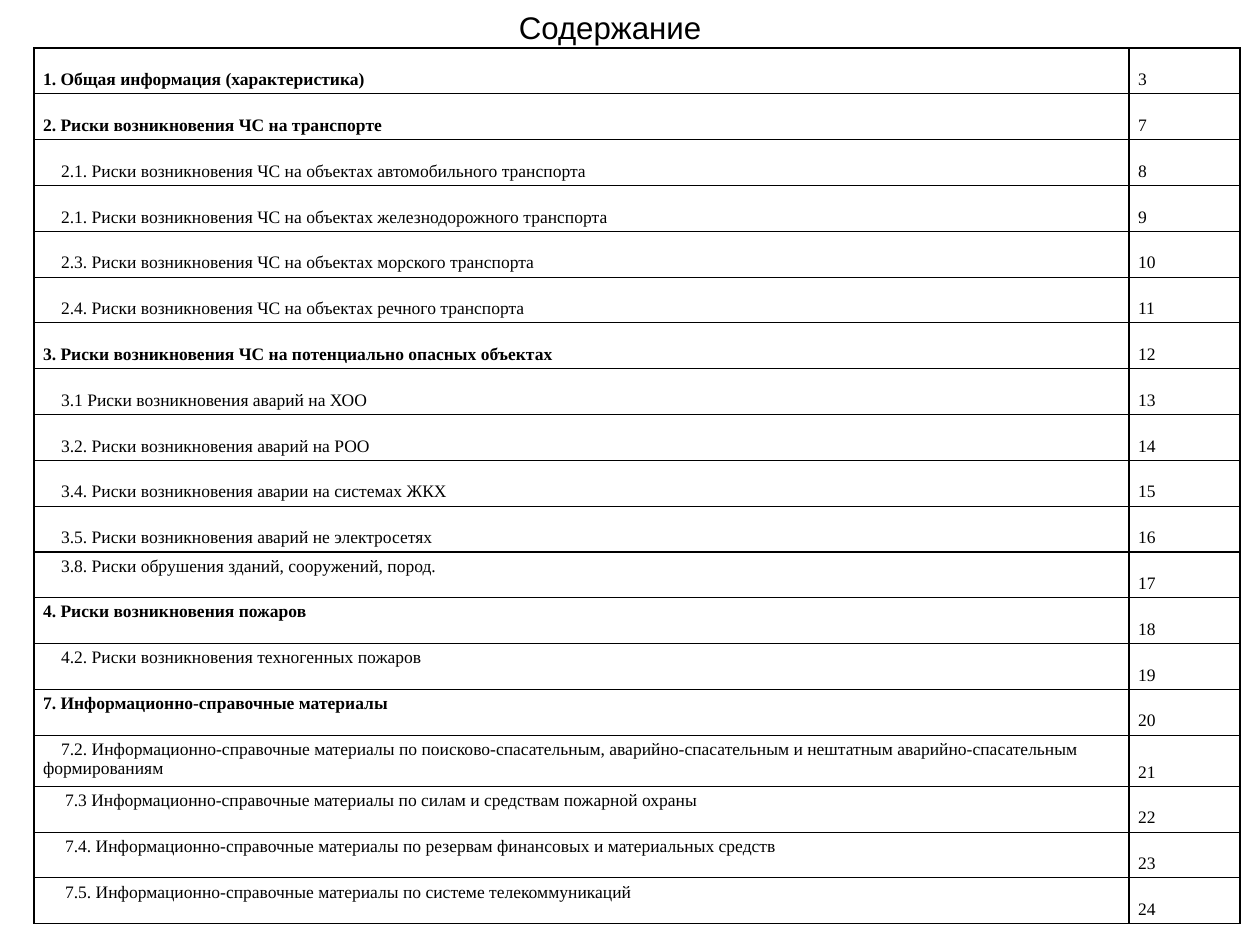
from lxml.etree import SubElement
from pptx import Presentation
from pptx.dml.color import RGBColor
from pptx.enum.text import MSO_ANCHOR as Anchor, MSO_AUTO_SIZE as Fit, PP_ALIGN as Align
from pptx.oxml.ns import qn
from pptx.util import Pt

PX = 914400 // 90
BLACK = RGBColor(0, 0, 0)
SIDES = ("lnL", "lnR", "lnT", "lnB")

# Left indent of the first line, in px, by kind of entry
HEAD, SUB, DEEP = 0, 18, 22
LOW, TOP = Anchor.BOTTOM, Anchor.TOP

ROWS = [
    (HEAD, LOW, "1. Общая информация (характеристика)", 3),
    (HEAD, LOW, "2. Риски возникновения ЧС на транспорте", 7),
    (SUB, LOW, "2.1. Риски возникновения ЧС на объектах автомобильного транспорта", 8),
    (SUB, LOW, "2.1. Риски возникновения ЧС на объектах железнодорожного транспорта", 9),
    (SUB, LOW, "2.3. Риски возникновения ЧС на объектах морского транспорта", 10),
    (SUB, LOW, "2.4. Риски возникновения ЧС на объектах речного транспорта", 11),
    (HEAD, LOW, "3. Риски возникновения ЧС на потенциально опасных объектах", 12),
    (SUB, LOW, "3.1 Риски возникновения аварий на ХОО", 13),
    (SUB, LOW, "3.2. Риски возникновения аварий на РОО", 14),
    (SUB, LOW, "3.4. Риски возникновения аварии на системах ЖКХ", 15),
    (SUB, LOW, "3.5. Риски возникновения аварий не электросетях", 16),
    (SUB, TOP, "3.8. Риски обрушения зданий, сооружений, пород.", 17),
    (HEAD, TOP, "4. Риски возникновения пожаров", 18),
    (SUB, TOP, "4.2. Риски возникновения техногенных пожаров", 19),
    (HEAD, TOP, "7. Информационно-справочные материалы", 20),
    (SUB, TOP, "7.2. Информационно-справочные материалы по поисково-спасательным, "
     "аварийно-спасательным и нештатным аварийно-спасательным формированиям", 21),
    (DEEP, TOP, "7.3 Информационно-справочные материалы по силам и средствам "
     "пожарной охраны", 22),
    (DEEP, TOP, "7.4. Информационно-справочные материалы по резервам финансовых "
     "и материальных средств", 23),
    (DEEP, TOP, "7.5. Информационно-справочные материалы по системе "
     "телекоммуникаций", 24),
]


class Deck:
    """Holds the style and the current slide; lengths are in px."""

    def __init__(self, wide, high):
        self.prs = Presentation()
        self.prs.slide_width, self.prs.slide_height = wide * PX, high * PX
        self.slide = self.prs.slides.add_slide(self.prs.slide_layouts[5])
        self.face, self.size = "Times New Roman", 14

    def text(self, para, words, bold=False, face=None, size=None):
        run = para.add_run()
        run.text = words
        font = run.font
        font.name, font.size = face or self.face, Pt(size or self.size)
        font.bold, font.color.rgb = bold, BLACK

    def title(self, words, x, y, w, h):
        shape = self.slide.shapes.title
        shape.left, shape.top, shape.width, shape.height = (n * PX for n in (x, y, w, h))
        frame = shape.text_frame
        frame.word_wrap, frame.auto_size = False, Fit.SHAPE_TO_FIT_TEXT
        frame.vertical_anchor = TOP
        para = frame.paragraphs[0]
        para.alignment = Align.CENTER
        self.text(para, words, face="Arial", size=25)

    def cell(self, cell, words, anchor, bold=False, indent=0):
        props = cell._tc.get_or_add_tcPr()
        for side in SIDES:
            line = SubElement(props, qn(f"a:{side}"), w=str(Pt(1)))
            fill = SubElement(line, qn("a:solidFill"))
            SubElement(fill, qn("a:srgbClr"), val=str(BLACK))
        cell.fill.background()
        cell.vertical_anchor = anchor
        para = cell.text_frame.paragraphs[0]
        if indent:
            para._p.get_or_add_pPr().set("indent", str(indent * PX))
        self.text(para, words, bold)

    def table(self, rows, x, y, cols, h):
        """Add the contents table; its height is shared evenly by the rows."""
        box = (n * PX for n in (x, y, sum(cols), h))
        table = self.slide.shapes.add_table(len(rows), len(cols), *box).table
        table.first_row = table.horz_banding = False
        for col, w in zip(table.columns, cols):
            col.width = w * PX
        for row, (indent, anchor, name, page) in zip(table.rows, rows):
            left, right = row.cells
            self.cell(left, name, anchor, indent == HEAD, indent)
            self.cell(right, str(page), LOW)


def main():
    deck = Deck(1260, 945)
    deck.title("Содержание", 509, 4, 202, 47)
    deck.table(ROWS, 34, 48, (1095, 111), 871)
    deck.prs.save("out.pptx")


if __name__ == "__main__":
    main()
